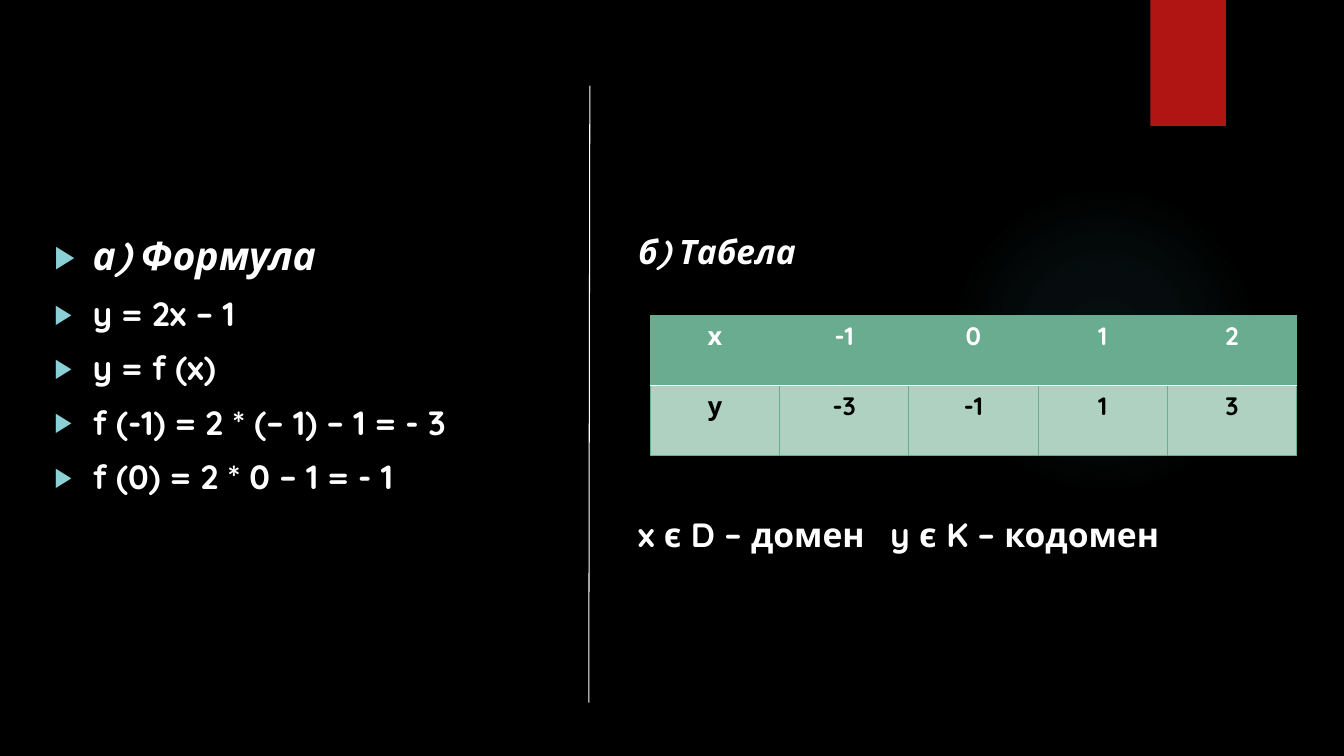
from dataclasses import dataclass

from lxml.etree import SubElement as Sub
from pptx import Presentation
from pptx.dml.color import RGBColor as RGB
from pptx.enum.shapes import MSO_CONNECTOR as Link, MSO_SHAPE as Form
from pptx.enum.text import PP_ALIGN as Align
from pptx.oxml import parse_xml
from pptx.oxml.ns import nsdecls, qn
from pptx.util import Inches, Pt


@dataclass(frozen=True)
class Theme:
    font: str = "Quicksand"
    back: str = "000000"
    text: str = "FFFFFF"
    dark: str = "000000"
    tag: str = "B01513"
    glow: str = "50B9C1"
    mark: str = "8AD0D6"
    head: str = "6AAC90"
    body: str = "AFD1C1"
    big: int = 28
    mid: int = 24
    small: int = 18


@dataclass(frozen=True)
class Line:
    text: str
    size: int
    slant: bool = False


@dataclass(frozen=True)
class Block:
    left: float
    top: float
    width: float
    height: float
    lines: tuple[Line, ...]
    marks: bool = False
    tab: float = 0


@dataclass(frozen=True)
class Row:
    cells: tuple[str, ...]
    fill: str
    ink: str
    upper: str
    lower: str


THEME = Theme()
BLOCKS = (
    Block(0.44, 2.25, 5.11, 4.59, (
        Line("а) Формула", THEME.big, True),
        Line("y = 2x – 1", THEME.mid),
        Line("y = f (x)", THEME.mid),
        Line("f (-1) = 2 * (– 1) – 1 = - 3", THEME.mid),
        Line("f (0) = 2 * 0 – 1 = - 1", THEME.mid),
    ), marks=True),
    Block(6.23, 2.24, 6.94, 0.55, (Line("б) Табела", THEME.mid, True),)),
    Block(6.23, 5.05, 6.94, 0.55,
          (Line("x ϵ D – домен \ty ϵ K – кодомен", THEME.mid),), tab=2.5),
)
ROWS = (
    Row(("х", "-1", "0", "1", "2"), THEME.head, THEME.text, THEME.head, THEME.text),
    Row(("у", "-3", "-1", "1", "3"), THEME.body, THEME.dark, THEME.text, THEME.head),
)


def style(para, size: int, ink: str, slant: bool = False) -> None:
    font = para.font
    font.name, font.size = THEME.font, Pt(size)
    font.bold, font.italic = True, slant
    font.color.rgb = RGB.from_string(ink)


def add_form(slide, kind, left: float, top: float, width: float, height: float):
    form = slide.shapes.add_shape(
        kind, Inches(left), Inches(top), Inches(width), Inches(height))
    form.shadow.inherit = False
    form.line.fill.background()
    return form


def add_glow(slide) -> None:
    form = add_form(slide, Form.OVAL, 9.41, 1.83, 3.08, 3.08)
    stops = "".join(
        f'<a:gs pos="{pos * 1000}"><a:srgbClr val="{THEME.glow}">'
        f'<a:alpha val="{alpha * 1000}"/></a:srgbClr></a:gs>'
        for pos, alpha in ((0, 7), (36, 6), (69, 0)))
    grad = parse_xml(
        f'<a:gradFill {nsdecls("a")}><a:gsLst>{stops}</a:gsLst><a:path path="circle">'
        '<a:fillToRect l="50000" t="50000" r="50000" b="50000"/></a:path></a:gradFill>')
    form._element.spPr.find(qn("a:prstGeom")).addnext(grad)


def add_mark(para) -> None:
    props = para._p.get_or_add_pPr()
    props.set("marL", str(Inches(0.38)))
    props.set("indent", str(-Inches(0.38)))
    Sub(Sub(props, qn("a:buClr")), qn("a:srgbClr"), val=THEME.mark)
    Sub(props, qn("a:buSzPct"), val="80000")
    Sub(props, qn("a:buFont"), typeface=THEME.font)
    Sub(props, qn("a:buChar"), char="▶")


def add_block(slide, block: Block) -> None:
    frame = slide.shapes.add_textbox(
        Inches(block.left), Inches(block.top),
        Inches(block.width), Inches(block.height)).text_frame
    frame.word_wrap = True
    for i, line in enumerate(block.lines):
        para = frame.add_paragraph() if i else frame.paragraphs[0]
        para.text = line.text
        if i:
            para.space_before = Pt(10)
        if block.marks:
            add_mark(para)
        if block.tab:
            tabs = Sub(para._p.get_or_add_pPr(), qn("a:tabLst"))
            Sub(tabs, qn("a:tab"), pos=str(Inches(block.tab)), algn="l")
        style(para, line.size, THEME.text, line.slant)


def add_edge(cell, side: str, color: str) -> None:
    width = Pt(1.5 if color == THEME.text else 0.75)
    edge = Sub(cell._tc.get_or_add_tcPr(), qn(f"a:ln{side}"), w=str(width))
    Sub(Sub(edge, qn("a:solidFill")), qn("a:srgbClr"), val=color)


def add_grid(slide, rows: tuple[Row, ...]) -> None:
    count = len(rows[0].cells)
    grid = slide.shapes.add_table(
        len(rows), count, Inches(6.45), Inches(3.13), Inches(6.41), Inches(1.39)).table
    for r, row in enumerate(rows):
        for c, text in enumerate(row.cells):
            cell = grid.cell(r, c)
            for side, color in (("L", THEME.head), ("R", THEME.head),
                                ("T", row.upper), ("B", row.lower)):
                add_edge(cell, side, color)
            cell.fill.solid()
            cell.fill.fore_color.rgb = RGB.from_string(row.fill)
            para = cell.text_frame.paragraphs[0]
            para.text, para.alignment = text, Align.CENTER
            style(para, THEME.small, row.ink)


def add_rule(slide) -> None:
    rule = slide.shapes.add_connector(
        Link.STRAIGHT, Inches(5.85), Inches(0.85), Inches(5.84), Inches(6.97))
    rule.line.color.rgb = RGB.from_string(THEME.text)
    rule.line.width = Pt(0.75)
    Sub(rule._element.spPr, qn("a:effectLst"))


def main() -> None:
    deck = Presentation()
    deck.slide_width, deck.slide_height = Inches(13.33), Inches(7.5)
    slide = deck.slides.add_slide(deck.slide_layouts[6])
    slide.background.fill.solid()
    slide.background.fill.fore_color.rgb = RGB.from_string(THEME.back)

    # Backdrop
    add_glow(slide)
    tag = add_form(slide, Form.RECTANGLE, 11.41, 0, 0.75, 1.25)
    tag.fill.solid()
    tag.fill.fore_color.rgb = RGB.from_string(THEME.tag)

    # Formula, table and divider
    for block in BLOCKS:
        add_block(slide, block)
    add_grid(slide, ROWS)
    add_rule(slide)
    deck.save("out.pptx")


if __name__ == "__main__":
    main()
